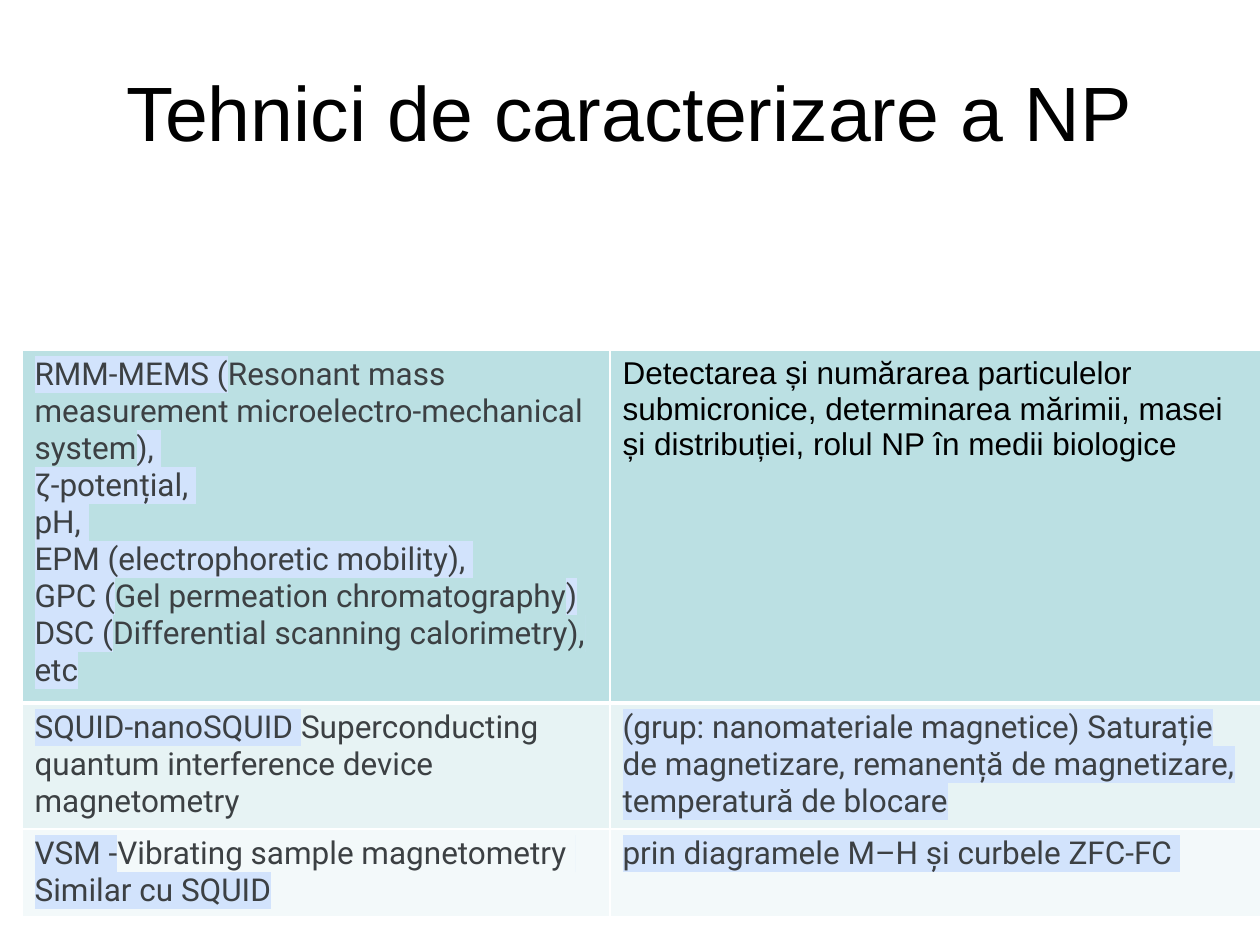
import pptx
import pptx.dml.color
import pptx.enum.text
import pptx.oxml
import pptx.oxml.ns
import pptx.util
from lxml import etree

RGB = pptx.dml.color.RGBColor
BLACK = RGB(0x00, 0x00, 0x00)
GREY = RGB(0x3C, 0x40, 0x43)
WHITE = RGB(0xFF, 0xFF, 0xFF)
HIGHLIGHT = RGB(0xD2, 0xE3, 0xFC)
ROW_FILLS = [RGB(0xBB, 0xE0, 0xE3), RGB(0xE7, 0xF3, 0xF4), RGB(0xF3, 0xF9, 0xFA)]

COLUMN_WIDTHS = [588, 651]
ROW_HEIGHTS = [345, 122, 87]
RULES = [1, 3, 1, 1]  # horizontal rules in points, top to bottom

# Each cell is a list of paragraphs, each paragraph a list of (text, marked)
TECHNIQUES = [
    [
        [("RMM-MEMS (", True),
         ("Resonant mass measurement microelectro-mechanical system", False),
         ("), ", True)],
        [("ζ-potențial, ", True)],
        [("pH, ", True)],
        [("EPM (electrophoretic mobility), ", True)],
        [("GPC (", True), ("Gel permeation chromatography", False),
         (") DSC (", True), ("Differential scanning calorimetry),", False),
         (" etc", True)],
    ],
    [[("SQUID-nanoSQUID ", True),
      ("Superconducting quantum interference device magnetometry", False)]],
    [[("VSM -", True), ("Vibrating sample magnetometry ", False),
      (" Similar cu SQUID", True)]],
]
USES = [
    [[("Detectarea și numărarea particulelor submicronice, determinarea "
       "mărimii, masei și distribuției, rolul NP în medii biologice", False)]],
    [[("(grup: nanomateriale magnetice) Saturație de magnetizare, remanență "
       "de magnetizare, temperatură de blocare", True)]],
    [[("prin diagramele M–H și curbele ZFC-FC ", True)]],
]


def px(length):
    return pptx.util.Emu(round(length * 914400 / 126))


def add_run(paragraph, text, size=18, font="Roboto", color=GREY, marked=False):
    run = paragraph.add_run()
    run.text = text
    run.font.size = pptx.util.Pt(size)
    run.font.name = font
    run.font.color.rgb = color
    if marked:
        # The highlight must directly follow the text fill
        qn = pptx.oxml.ns.qn
        highlight = etree.Element(qn("a:highlight"))
        etree.SubElement(highlight, qn("a:srgbClr"), val=str(HIGHLIGHT))
        run.font._element.find(qn("a:solidFill")).addnext(highlight)


def add_title(slide, text):
    title = slide.shapes.add_textbox(px(63), px(32), px(1134), px(157))
    frame = title.text_frame
    frame.word_wrap = True
    frame.vertical_anchor = pptx.enum.text.MSO_ANCHOR.MIDDLE
    frame.paragraphs[0].alignment = pptx.enum.text.PP_ALIGN.CENTER
    add_run(frame.paragraphs[0], text, size=44, font="Arial", color=BLACK)


def set_borders(cell, top, bottom):
    qn = pptx.oxml.ns.qn
    properties = cell._tc.get_or_add_tcPr()
    widths = {"lnL": 1, "lnR": 1, "lnT": top, "lnB": bottom}
    for position, (side, width) in enumerate(widths.items()):
        line = etree.Element(qn(f"a:{side}"), w=str(pptx.util.Pt(width)))
        fill = etree.SubElement(line, qn("a:solidFill"))
        etree.SubElement(fill, qn("a:srgbClr"), val=str(WHITE))
        properties.insert(position, line)


def fill_cell(cell, paragraphs, **text_format):
    frame = cell.text_frame
    for index, runs in enumerate(paragraphs):
        paragraph = frame.add_paragraph() if index else frame.paragraphs[0]
        for text, marked in runs:
            add_run(paragraph, text, marked=marked, **text_format)


def add_techniques_table(slide):
    table = slide.shapes.add_table(
        len(ROW_HEIGHTS), len(COLUMN_WIDTHS), px(22), px(350),
        px(sum(COLUMN_WIDTHS)), px(sum(ROW_HEIGHTS))).table
    table.first_row = False
    table.horz_banding = False
    for column, width in zip(table.columns, COLUMN_WIDTHS):
        column.width = px(width)
    for r, height in enumerate(ROW_HEIGHTS):
        table.rows[r].height = px(height)
        for c, contents in enumerate((TECHNIQUES, USES)):
            cell = table.cell(r, c)
            cell.fill.solid()
            cell.fill.fore_color.rgb = ROW_FILLS[r]
            set_borders(cell, RULES[r], RULES[r + 1])
            # The first use is set in the plain body style
            plain = {"font": "Arial", "color": BLACK} if (r, c) == (0, 1) else {}
            fill_cell(cell, contents[r], **plain)


def main():
    deck = pptx.Presentation()
    deck.slide_width, deck.slide_height = px(1260), px(945)
    slide = deck.slides.add_slide(deck.slide_layouts[6])
    add_title(slide, "Tehnici de caracterizare a NP")
    add_techniques_table(slide)
    deck.save("out.pptx")


if __name__ == "__main__":
    main()
